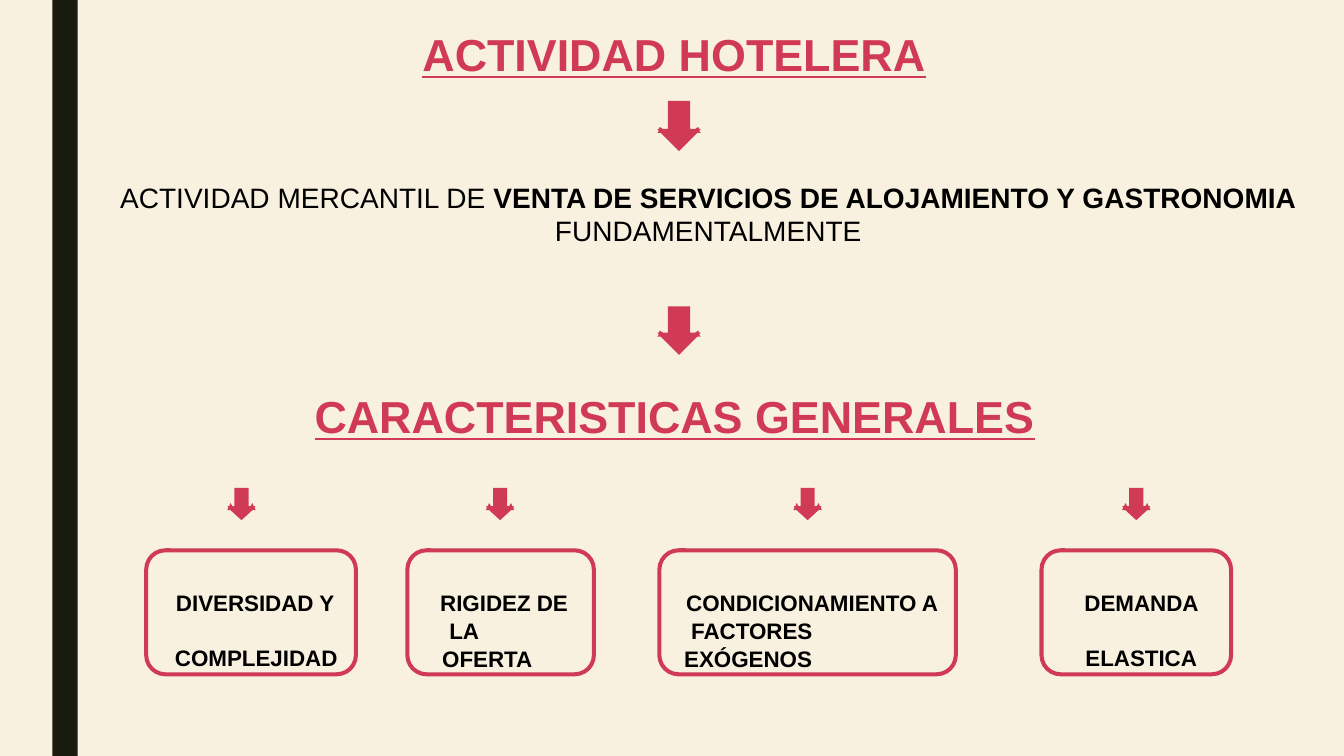
from pptx import Presentation
from pptx.dml.color import RGBColor
from pptx.enum.shapes import MSO_SHAPE as Shape
from pptx.enum.text import MSO_ANCHOR as Anchor, MSO_AUTO_SIZE as AutoSize, PP_ALIGN as Align
from pptx.util import Inches, Pt

COLORS = {"background": "F9F1E0", "band": "181B0D", "accent": "D13A55", "text": "000000"}
FONT = "Arial"

TITLE = "ACTIVIDAD HOTELERA"
SUBTITLE = "CARACTERISTICAS GENERALES"
DEFINITION = [
    [("ACTIVIDAD MERCANTIL DE ", False),
     ("VENTA DE SERVICIOS DE ALOJAMIENTO Y GASTRONOMIA", True)],
    [("FUNDAMENTALMENTE", False)],
]
FEATURES = [
    {"left": 1.43, "width": 2.12, "text_left": 1.68, "arrow": 2.395,
     "lines": [("DIVERSIDAD Y", 0.01), ("COMPLEJIDAD", 0)]},
    {"left": 4.02, "width": 1.89, "text_left": 4.31, "arrow": 4.96,
     "lines": [("RIGIDEZ DE", 0), ("LA", 0.09), ("OFERTA", 0.02)]},
    {"left": 6.52, "width": 2.98, "text_left": 6.73, "arrow": 8.01,
     "lines": [("CONDICIONAMIENTO A", 0.02), ("FACTORES", 0.07), ("EXÓGENOS", 0)]},
    {"left": 10.31, "width": 1.92, "text_left": 10.7, "arrow": 11.27,
     "lines": [("DEMANDA", 0), ("ELASTICA", 0.01)]},
]

LARGE_HEAD = [(0.11, 0.22), (0.16, 0.22), (0.19, 0.24), (0.2, 0.22), (0.215, 0.22),
              (0.2, 0.2), (0.215, 0.18), (0.18, 0.18)]
SMALL_HEAD = [(0.07, 0.14), (0.09, 0.14), (0.11, 0.17), (0.12, 0.14), (0.14, 0.14),
              (0.13, 0.13), (0.14, 0.1), (0.11, 0.1)]
ARROW_CENTER = 6.735
BOX_TOP, BOX_HEIGHT, BORDER, RADIUS = 5.44, 1.27, 0.04, 0.19
TEXT_TOP = 5.79
LINE_PITCH, LINE_HEIGHT = 19.3, 18.4


def color(name):
    return RGBColor.from_string(COLORS[name])


def add_text(paragraph, text, size=16, bold=False, underline=False, fill="text"):
    run = paragraph.add_run()
    run.text = text
    font = run.font
    font.name, font.size, font.bold, font.underline = FONT, Pt(size), bold, underline
    font.color.rgb = color(fill)


def prepare_frame(shape, left=0, top=0.01, wrap=True):
    frame = shape.text_frame
    frame.auto_size = AutoSize.NONE
    frame.word_wrap = wrap
    frame.vertical_anchor = Anchor.TOP
    frame.margin_left, frame.margin_top = Inches(left), Inches(top)
    frame.margin_right = frame.margin_bottom = 0
    return frame


def place(shape, left, top, width, height):
    shape.left, shape.top = Inches(left), Inches(top)
    shape.width, shape.height = Inches(width), Inches(height)


def add_heading(shape, text):
    paragraph = prepare_frame(shape, left=0.01, wrap=False).paragraphs[0]
    paragraph.alignment = Align.LEFT
    paragraph.space_before = Pt(1)
    add_text(paragraph, text, size=32, bold=True, underline=True, fill="accent")


def add_arrow(slide, center, top, height, head):
    shaft = head[0][0]
    right = [(shaft, 0)] + [(x, height - rise) for x, rise in head]
    outline = right + [(0, height)] + [(-x, y) for x, y in reversed(right)]
    points = [(Inches(center + x), Inches(top + y)) for x, y in outline]
    builder = slide.shapes.build_freeform(*points[0])
    builder.add_line_segments(points[1:], close=True)
    arrow = builder.convert_to_shape()
    arrow.shadow.inherit = False
    arrow.fill.solid()
    arrow.fill.fore_color.rgb = color("accent")
    arrow.line.fill.background()


def add_feature(slide, feature):
    width, height = feature["width"] - BORDER, BOX_HEIGHT - BORDER
    left, top = feature["left"] + BORDER / 2, BOX_TOP + BORDER / 2
    box = slide.shapes.add_shape(Shape.ROUNDED_RECTANGLE, Inches(left), Inches(top),
                                 Inches(width), Inches(height))
    box.adjustments[0] = RADIUS / height
    box.shadow.inherit = False
    box.fill.solid()
    box.fill.fore_color.rgb = color("background")
    box.line.color.rgb = color("accent")
    box.line.width = Inches(BORDER)
    frame = prepare_frame(box, feature["text_left"] - left, TEXT_TOP - top, wrap=False)
    lines = feature["lines"]
    pitch = LINE_PITCH * 2 / (len(lines) - 1)
    for index, (text, indent) in enumerate(lines):
        paragraph = frame.add_paragraph() if index else frame.paragraphs[0]
        paragraph.alignment = Align.LEFT
        paragraph.space_before = Pt(pitch - LINE_HEIGHT if index else 0.9)
        paragraph._p.get_or_add_pPr().set("marL", str(Inches(indent)))
        add_text(paragraph, text, bold=True)


def main():
    presentation = Presentation()
    presentation.slide_width, presentation.slide_height = Inches(13.33), Inches(7.5)
    slide = presentation.slides.add_slide(presentation.slide_layouts[5])
    slide.background.fill.solid()
    slide.background.fill.fore_color.rgb = color("background")

    band = slide.shapes.add_shape(Shape.RECTANGLE, Inches(0.52), 0, Inches(0.25), Inches(7.5))
    band.shadow.inherit = False
    band.fill.solid()
    band.fill.fore_color.rgb = color("band")
    band.line.fill.background()

    title = slide.shapes.title
    place(title, 4.18, 0.26, 5.02, 0.56)
    add_heading(title, TITLE)
    add_arrow(slide, ARROW_CENTER, 1, 0.5, LARGE_HEAD)

    definition = slide.shapes.add_textbox(Inches(1.18), Inches(1.78), Inches(11.69), Inches(0.7))
    frame = prepare_frame(definition, wrap=False)
    for index, runs in enumerate(DEFINITION):
        paragraph = frame.add_paragraph() if index else frame.paragraphs[0]
        paragraph.alignment = Align.CENTER
        paragraph.space_before = Pt(0 if index else 1.1)
        for text, bold in runs:
            add_text(paragraph, text, size=20, bold=bold)

    add_arrow(slide, ARROW_CENTER, 3.04, 0.48, LARGE_HEAD)
    subtitle = slide.shapes.add_textbox(Inches(3.11), Inches(3.85), Inches(7.17), Inches(0.56))
    add_heading(subtitle, SUBTITLE)

    for feature in FEATURES:
        add_arrow(slide, feature["arrow"], 4.84, 0.32, SMALL_HEAD)
        add_feature(slide, feature)

    presentation.save("out.pptx")


if __name__ == "__main__":
    main()
